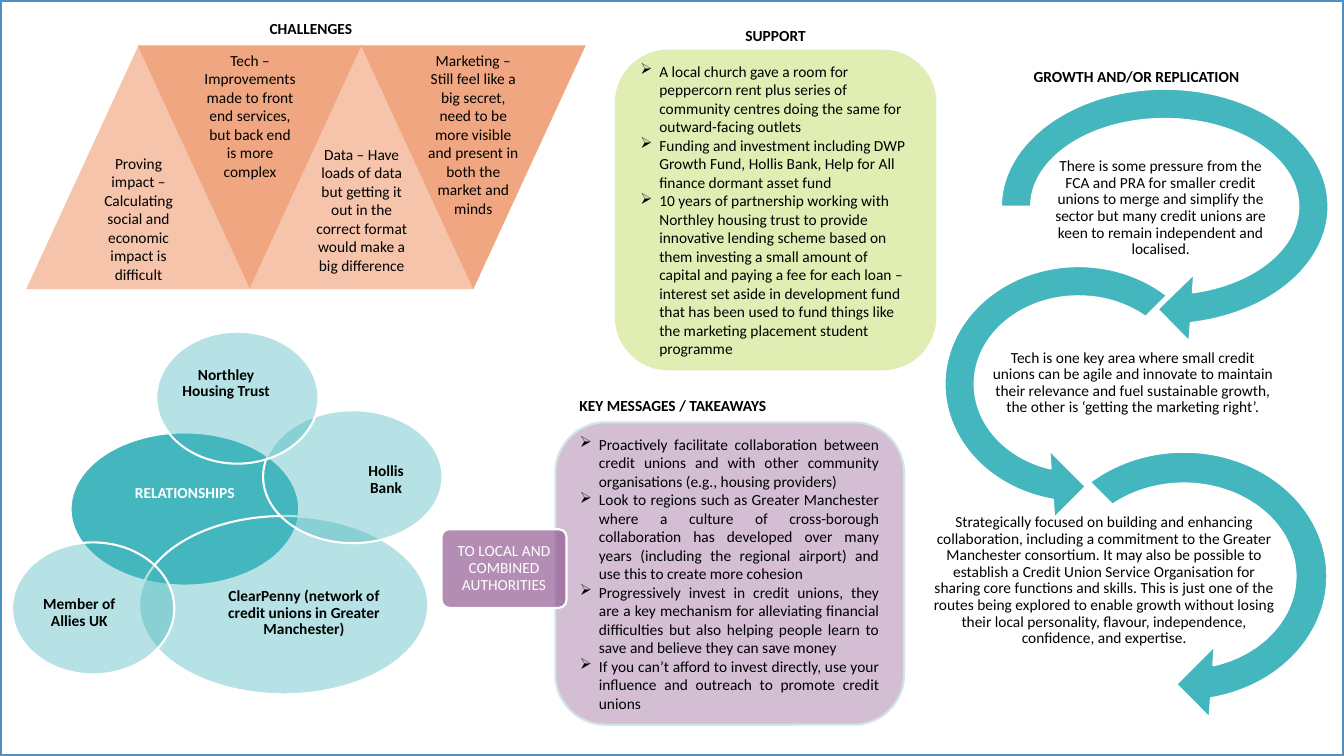
"""Build a one-slide credit union case study: challenges, support, relationships, messages and growth."""
from lxml.etree import SubElement
from pptx import Presentation
from pptx.dml.color import RGBColor
from pptx.enum.shapes import MSO_SHAPE
from pptx.enum.text import MSO_ANCHOR, PP_ALIGN
from pptx.oxml.ns import qn
from pptx.util import Pt

COLORS = {
    "black": "000000", "white": "FFFFFF", "teal": "44B6BD", "purple": "935E94",
    "green": "AACE2E", "peach": "F5C4AB", "orange": "F0A781", "pale": "CFE5E8", "frame": "4E90C4",
}

presentation = Presentation()
presentation.slide_width, presentation.slide_height = Pt(960), Pt(540)
slide = presentation.slides.add_slide(presentation.slide_layouts[6])


def add_box(preset, box, fill=None, alpha=100, line=None, width=1.5):
    lengths = [Pt(value) for value in box]
    if preset is None:
        return slide.shapes.add_textbox(*lengths)
    shape = slide.shapes.add_shape(preset, *lengths)
    shape.shadow.inherit = False
    if fill:
        shape.fill.solid()
        shape.fill.fore_color.rgb = RGBColor.from_string(COLORS[fill])
        if alpha < 100:
            color = shape._element.spPr.find(qn("a:solidFill"))[0]
            SubElement(color, qn("a:alpha"), val=str(alpha * 1000))
    else:
        shape.fill.background()
    if line:
        shape.line.color.rgb = RGBColor.from_string(COLORS[line])
        shape.line.width = Pt(width)
    else:
        shape.line.fill.background()
    return shape


def write(shape, texts, color="black", bold=False, align=PP_ALIGN.CENTER, anchor=MSO_ANCHOR.MIDDLE,
          insets=(7.2, 3.6, 7.2, 3.6), tight=False, bullets=False):
    frame = shape.text_frame
    frame.word_wrap = True
    frame.vertical_anchor = anchor
    frame.margin_left, frame.margin_top, frame.margin_right, frame.margin_bottom = map(Pt, insets)
    frame.text = "\n".join(texts)
    for paragraph in frame.paragraphs:
        paragraph.alignment = align
        if tight:
            paragraph.line_spacing = 0.9
            paragraph.space_after = Pt(4)
        if bullets:
            properties = paragraph._p.get_or_add_pPr()
            properties.set("marL", str(Pt(13.5)))
            properties.set("indent", str(-Pt(13.5)))
            SubElement(properties, qn("a:buChar"), char="➢")
        paragraph.font.name = "Calibri"
        paragraph.font.size = Pt(11)
        paragraph.font.bold = bold
        paragraph.font.color.rgb = RGBColor.from_string(COLORS[color])


messages = add_box(MSO_SHAPE.ROUNDED_RECTANGLE, (396.7, 301.7, 249.1, 216), "purple", 40, "pale")
write(messages, [
    "Proactively facilitate collaboration between credit unions and with other community "
    "organisations (e.g., housing providers)",
    "Look to regions such as Greater Manchester where a culture of cross-borough collaboration has "
    "developed over many years (including the regional airport) and use this to create more cohesion",
    "Progressively invest in credit unions, they are a key mechanism for alleviating financial "
    "difficulties but also helping people learn to save and believe they can save money",
    "If you can’t afford to invest directly, use your influence and outreach to promote credit unions",
], align=PP_ALIGN.JUSTIFY, bullets=True)

audience = add_box(MSO_SHAPE.ROUNDED_RECTANGLE, (315.4, 378, 89.3, 56.2), "purple", 70, "white")
audience.adjustments[0] = 0.1
write(audience, ["TO LOCAL AND COMBINED AUTHORITIES"], "white", insets=(5.6, 4.2, 5.6, 4.2), tight=True)

challenges = [
    ("Proving impact –Calculating social and economic impact is difficult", 4.3),
    ("Tech – Improvements made to front end services, but back end is more complex", 3.9),
    ("Data – Have loads of data but getting it out in the correct format would make a big difference", 10.8),
    ("Marketing – Still feel like a big secret, need to be more visible and present in both the "
     "market and minds", 3.9),
]
for index, (text, inset) in enumerate(challenges):
    box = (18.7 + 79.7 * index, 32.4, 160.6, 174.2)
    if index % 2:
        triangle = add_box(MSO_SHAPE.FLOWCHART_MERGE, box, "orange")
        write(triangle, [text], anchor=MSO_ANCHOR.TOP, insets=(7.2, inset, 7.2, 0))
    else:
        triangle = add_box(MSO_SHAPE.ISOSCELES_TRIANGLE, box, "peach")
        write(triangle, [text], anchor=MSO_ANCHOR.BOTTOM, insets=(7.2, 0, 7.2, inset))

support = add_box(MSO_SHAPE.ROUNDED_RECTANGLE, (439.2, 35.5, 229.7, 229), "green", 36)
write(support, [
    "A local church gave a room for peppercorn rent plus series of community centres doing the same "
    "for outward-facing outlets",
    "Funding and investment including DWP Growth Fund, Hollis Bank, Help for All finance dormant asset fund",
    "10 years of partnership working with Northley housing trust to provide innovative lending scheme "
    "based on them investing a small amount of capital and paying a fee for each loan – interest set "
    "aside in development fund that has been used to fund things like the marketing placement student "
    "programme",
], align=PP_ALIGN.LEFT, bullets=True)

relationships = [
    ("RELATIONSHIPS", (50.4, 308.9, 163.4, 109.4), 100, "white", MSO_ANCHOR.MIDDLE, (0, 4.3, 0, 27.2)),
    ("ClearPenny (network of credit unions in Greater Manchester)", (99.4, 368.6, 206.6, 127.4), 39,
     "black", MSO_ANCHOR.MIDDLE, (29, 26, 0, 14.5)),
    ("Member of Allies UK", (8.6, 387.4, 115.9, 94.3), 39, "black", MSO_ANCHOR.MIDDLE, (0, 11.4, 19.8, 5)),
    ("Hollis Bank", (187.9, 293, 128.2, 95), 39, "black", MSO_ANCHOR.BOTTOM, (49.7, 30.7, 2.1, 19.2)),
    ("Northley Housing Trust", (111.6, 236.9, 115.9, 94.3), 39, "black", MSO_ANCHOR.TOP, (0, 11.4, 16, 5)),
]
for text, box, alpha, color, anchor, insets in relationships:
    oval = add_box(MSO_SHAPE.OVAL, box, "teal", alpha, "white")
    write(oval, [text], color, True, anchor=anchor, insets=insets, tight=True)

growth = [
    (MSO_SHAPE.CIRCULAR_ARROW, (701.3, 49.7, 261.4, 195.8), (45, 108), (747.4, 93.6, 163.4, 110.2),
     "There is some pressure from the FCA and PRA for smaller credit unions to merge and simplify the "
     "sector but many credit unions are keen to remain independent and localised."),
    (MSO_SHAPE.LEFT_CIRCULAR_ARROW, (661, 176.4, 218.9, 195.8), (63, 189), (707.8, 226.8, 203, 93.6),
     "Tech is one key area where small credit unions can be agile and innovate to maintain their "
     "relevance and fuel sustainable growth, the other is ‘getting the marketing right’."),
    (MSO_SHAPE.CIRCULAR_ARROW, (728.6, 308.2, 234, 206.6), (45, 135), (666, 367.9, 245.5, 93.6),
     "Strategically focused on building and enhancing collaboration, including a commitment to the "
     "Greater Manchester consortium. It may also be possible to establish a Credit Union Service "
     "Organisation for sharing core functions and skills. This is just one of the routes being explored "
     "to enable growth without losing their local personality, flavour, independence, confidence, "
     "and expertise."),
]
for preset, arrow_box, angles, text_box, text in growth:
    arrow = add_box(preset, arrow_box, "teal", line="white")
    for index, value in enumerate((0.11, 11.42, *angles, 0.125)):
        arrow.adjustments[index] = value
    write(add_box(None, text_box), [text], insets=(0.7, 0.7, 0.7, 0.7), tight=True)

headings = [
    ("KEY MESSAGES / TAKEAWAYS", (315.4, 279.4, 330.5, 20.9)),
    ("CHALLENGES", (25.2, 10.1, 393.8, 20.9)),
    ("SUPPORT", (439.2, 15.1, 229.7, 20.9)),
    ("GROWTH AND/OR REPLICATION", (661, 44.6, 301.7, 20.9)),
]
for text, box in headings:
    write(add_box(None, box), [text], bold=True, anchor=MSO_ANCHOR.TOP)

add_box(MSO_SHAPE.RECTANGLE, (0, 0, 960, 540), line="frame", width=3)

presentation.save("out.pptx")
